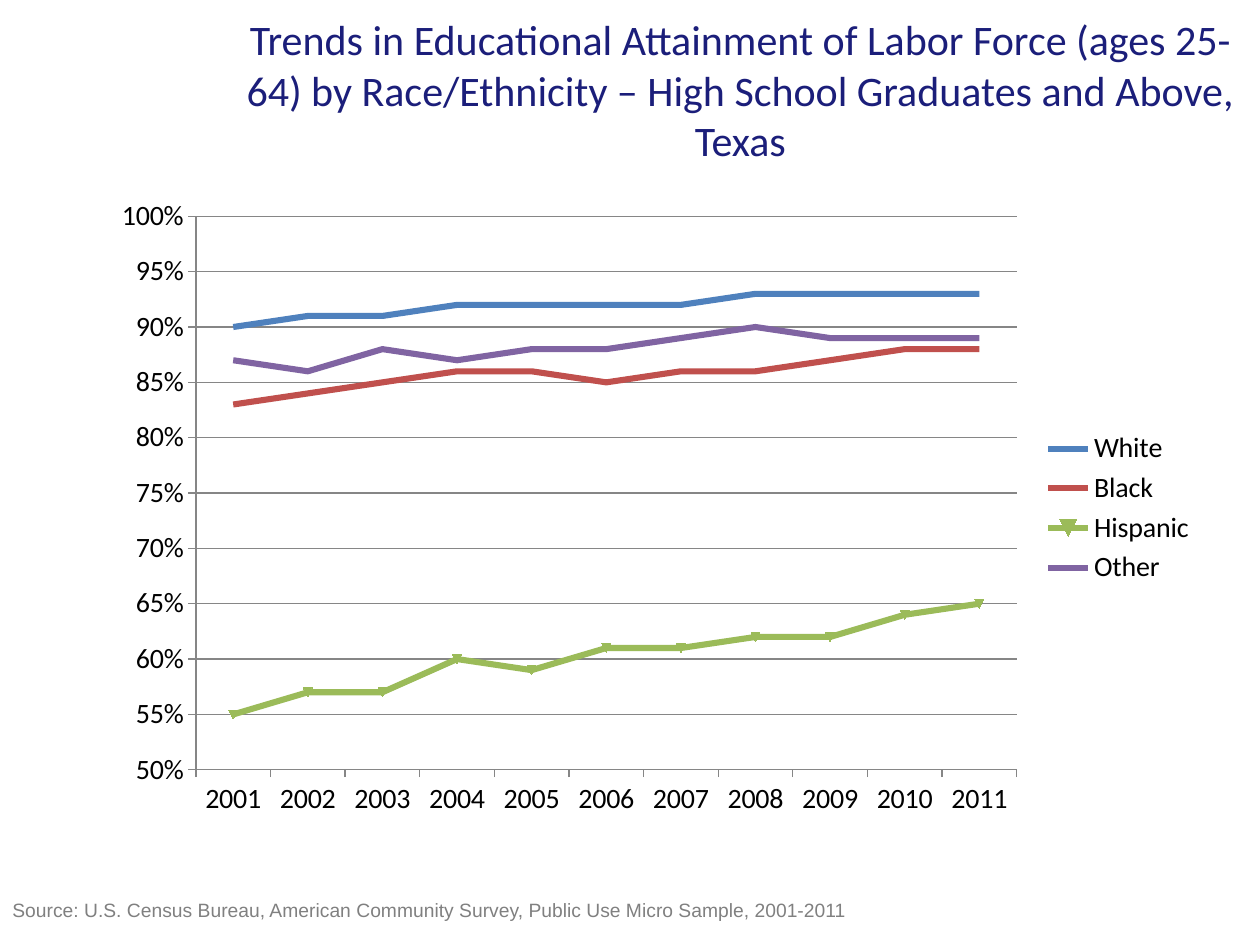
from lxml.etree import SubElement
from pptx import Presentation
from pptx.chart.data import CategoryChartData
from pptx.dml.color import RGBColor
from pptx.enum.chart import XL_CHART_TYPE, XL_LEGEND_POSITION, XL_MARKER_STYLE, XL_TICK_MARK
from pptx.enum.text import MSO_ANCHOR, MSO_AUTO_SIZE, PP_ALIGN
from pptx.oxml.ns import qn
from pptx.util import Cm, Pt

NAVY = RGBColor(0x1B, 0x1E, 0x7A)
GRAY = RGBColor(0x80, 0x80, 0x80)
AXIS_GRAY = RGBColor(0x86, 0x86, 0x86)
BLACK = RGBColor(0x00, 0x00, 0x00)
BLUE = RGBColor(0x4F, 0x81, 0xBD)
RED = RGBColor(0xC0, 0x50, 0x4D)
GREEN = RGBColor(0x9B, 0xBB, 0x59)
PURPLE = RGBColor(0x80, 0x64, 0xA2)

SERIES = [
    ("White", BLUE, [0.9, 0.91, 0.91, 0.92, 0.92, 0.92, 0.92, 0.93, 0.93, 0.93, 0.93]),
    ("Black", RED, [0.83, 0.84, 0.85, 0.86, 0.86, 0.85, 0.86, 0.86, 0.87, 0.88, 0.88]),
    ("Hispanic", GREEN, [0.55, 0.57, 0.57, 0.6, 0.59, 0.61, 0.61, 0.62, 0.62, 0.64, 0.65]),
    ("Other", PURPLE, [0.87, 0.86, 0.88, 0.87, 0.88, 0.88, 0.89, 0.9, 0.89, 0.89, 0.89]),
]


def write_text(shape, text, *, size, font, color, align, anchor, auto_size):
    frame = shape.text_frame
    frame.word_wrap = True
    frame.auto_size = auto_size
    frame.vertical_anchor = anchor
    paragraph = frame.paragraphs[0]
    paragraph.alignment = align
    run = paragraph.add_run()
    run.text = text
    run.font.size = Pt(size)
    run.font.name = font
    run.font.color.rgb = color


presentation = Presentation()
presentation.slide_width = Cm(25.4)
presentation.slide_height = Cm(19.05)
slide = presentation.slides.add_slide(presentation.slide_layouts[5])

# Title
title = slide.shapes.title
title.left, title.top, title.width, title.height = Cm(4.45), Cm(0.43), Cm(20.95), Cm(2.74)
write_text(
    title,
    "Trends in Educational Attainment of Labor Force (ages 25-64) by Race/Ethnicity"
    " – High School Graduates and Above, Texas",
    size=24, font="Calibri", color=NAVY, align=PP_ALIGN.CENTER,
    anchor=MSO_ANCHOR.MIDDLE, auto_size=MSO_AUTO_SIZE.NONE,
)

# Line chart
chart_data = CategoryChartData(number_format="0%")
chart_data.categories = [str(year) for year in range(2001, 2012)]
for name, color, values in SERIES:
    chart_data.add_series(name, values)
chart = slide.shapes.add_chart(
    XL_CHART_TYPE.LINE, Cm(2.03), Cm(3.78), Cm(22.33), Cm(12.93), chart_data
).chart
chart.has_title = False
chart.font.size = Pt(16)
chart.font.name = "Calibri"
chart.font.color.rgb = BLACK
chart.has_legend = True
chart.legend.position = XL_LEGEND_POSITION.RIGHT
chart.legend.include_in_layout = False

plot = chart.plots[0]
plot.vary_by_categories = False
for series, (name, color, values) in zip(plot.series, SERIES):
    series.smooth = False
    series.format.line.width = Pt(3.5)
    series.format.line.color.rgb = color
    if name == "Hispanic":
        marker = series.marker
        marker.style = XL_MARKER_STYLE.AUTOMATIC
        marker.size = 5
        marker.format.fill.solid()
        marker.format.fill.fore_color.rgb = color
        marker.format.line.color.rgb = color
    else:
        series.marker.style = XL_MARKER_STYLE.NONE

value_axis = chart.value_axis
value_axis.minimum_scale = 0.5
value_axis.maximum_scale = 1
value_axis.major_unit = 0.05
value_axis.tick_labels.number_format = "0%"
value_axis.tick_labels.number_format_is_linked = False
value_axis.has_major_gridlines = True
value_axis.major_gridlines.format.line.color.rgb = AXIS_GRAY
for axis in (chart.category_axis, value_axis):
    axis.major_tick_mark = XL_TICK_MARK.OUTSIDE
    axis.minor_tick_mark = XL_TICK_MARK.NONE
    axis.format.line.color.rgb = AXIS_GRAY

# Fixed inner plot area, as fractions of the chart
plot_area = chart._chartSpace.chart.plotArea
for old_layout in plot_area.findall(qn("c:layout")):
    plot_area.remove(old_layout)
layout = SubElement(plot_area, qn("c:layout"))
plot_area.insert(0, layout)
manual_layout = SubElement(layout, qn("c:manualLayout"))
for tag, value in [("layoutTarget", "inner"), ("xMode", "edge"), ("yMode", "edge"),
                   ("x", "0.086"), ("y", "0.045"), ("w", "0.741"), ("h", "0.863")]:
    SubElement(manual_layout, qn(f"c:{tag}")).set("val", value)

# Source line
source = slide.shapes.add_textbox(Cm(0), Cm(17.98), Cm(17.78), Cm(0.74))
write_text(
    source,
    "Source: U.S. Census Bureau, American Community Survey, Public Use Micro Sample, 2001-2011",
    size=11, font="Arial", color=GRAY, align=PP_ALIGN.LEFT,
    anchor=MSO_ANCHOR.TOP, auto_size=MSO_AUTO_SIZE.SHAPE_TO_FIT_TEXT,
)

presentation.save("out.pptx")
